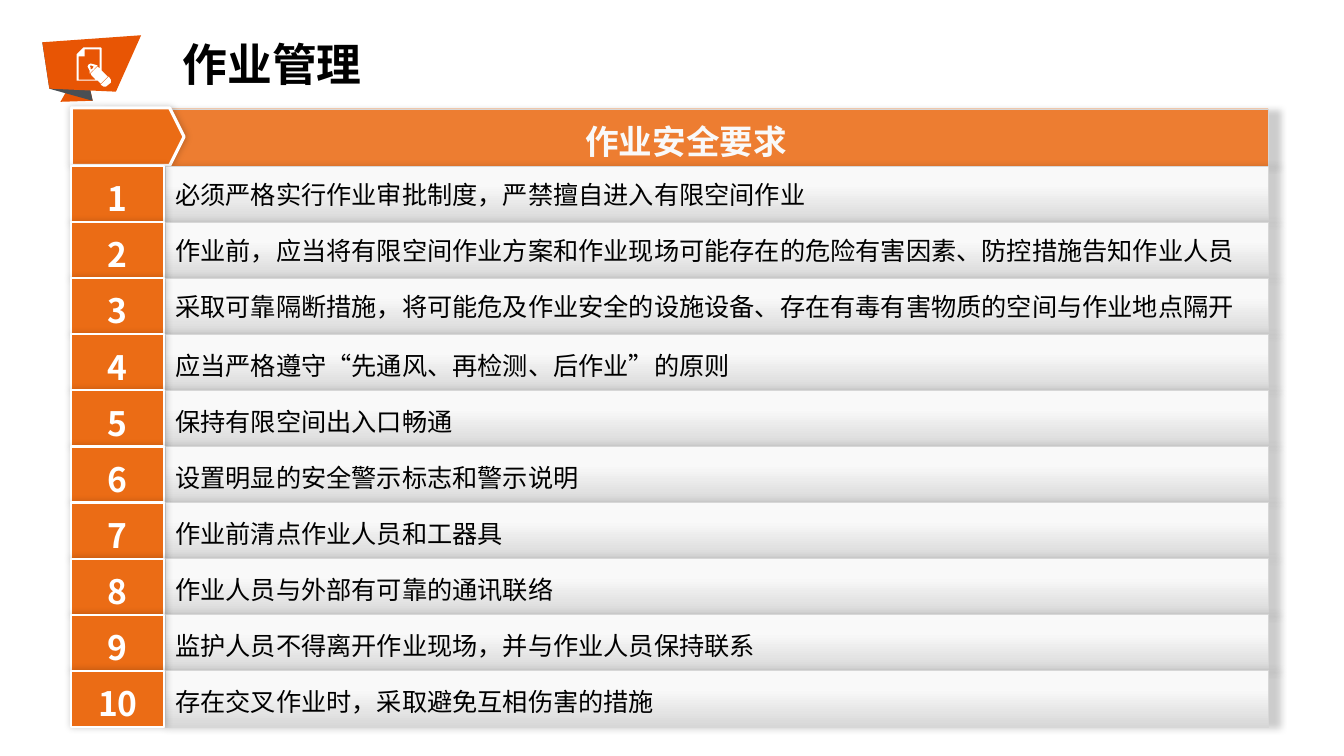
"""Builds the slide on work management: ten safety requirements under an orange header."""
from dataclasses import dataclass

from lxml.etree import SubElement
from pptx import Presentation
from pptx.dml.color import RGBColor
from pptx.enum.shapes import MSO_SHAPE
from pptx.enum.text import MSO_ANCHOR, PP_ALIGN
from pptx.oxml.ns import qn
from pptx.util import Cm, Pt


@dataclass(frozen=True)
class Theme:
    font: str = "Noto Sans CJK SC"
    header: str = "ED7D31"
    number: str = "EB6C15"
    badge: str = "E85504"
    fold: str = "494F54"
    light: str = "F9F9F9"
    grey: str = "D7D7D7"
    white: str = "FFFFFF"
    black: str = "000000"
    title_size: int = 32
    heading_size: int = 24
    body_size: int = 18


theme = Theme()


def write_text(shape, text, size, color, bold=False, align=PP_ALIGN.LEFT, spacing=1.0, wrap=True):
    frame = shape.text_frame
    frame.word_wrap = wrap
    paragraph = frame.paragraphs[0]
    paragraph.alignment = align
    paragraph.line_spacing = spacing
    run = paragraph.add_run()
    run.text = text
    run.font.name = theme.font
    run.font.size = Pt(size)
    run.font.bold = bold
    run.font.color.rgb = RGBColor.from_string(color)
    SubElement(run.font._element, qn("a:ea"), typeface=theme.font)


def add_panel(kind, left, top, width, height, fill, line, line_width):
    shape = slide.shapes.add_shape(kind, Cm(left), Cm(top), Cm(width), Cm(height))
    if len(fill) == 1:
        shape.fill.solid()
        shape.fill.fore_color.rgb = RGBColor.from_string(fill[0])
    else:
        shape.fill.gradient()
        shape.fill.gradient_angle = 270
        for stop, color, position in zip(shape.fill.gradient_stops, fill, (0.33, 1)):
            stop.color.rgb = RGBColor.from_string(color)
            stop.position = position
    shape.line.color.rgb = RGBColor.from_string(line)
    shape.line.width = Pt(line_width)
    shape.shadow.inherit = False
    effects = shape._element.spPr.find(qn("a:effectLst"))
    shadow = SubElement(effects, qn("a:outerShdw"), blurRad=str(Pt(5)), dist="0", dir="0",
                        sx="101000", algn="l", rotWithShape="0")
    shadow_color = SubElement(shadow, qn("a:srgbClr"), val=theme.black)
    SubElement(shadow_color, qn("a:alpha"), val="20000")
    shape.text_frame.vertical_anchor = MSO_ANCHOR.MIDDLE
    return shape


presentation = Presentation()
presentation.slide_width = Cm(33.87)
presentation.slide_height = Cm(19.05)
slide = presentation.slides.add_slide(presentation.slide_layouts[6])

header = add_panel(MSO_SHAPE.RECTANGLE, 2.62, 2.74, 29.34, 1.45, [theme.header], theme.grey, 0.25)
write_text(header, "作业安全要求", theme.heading_size, theme.light, bold=True,
           align=PP_ALIGN.CENTER, spacing=1.2)
arrow = add_panel(MSO_SHAPE.PENTAGON, 1.8, 2.72, 2.84, 1.45, [theme.number], theme.white, 2.25)
arrow.adjustments[0] = 0.25

requirements = [
    "必须严格实行作业审批制度，严禁擅自进入有限空间作业",
    "作业前，应当将有限空间作业方案和作业现场可能存在的危险有害因素、防控措施告知作业人员",
    "采取可靠隔断措施，将可能危及作业安全的设施设备、存在有毒有害物质的空间与作业地点隔开",
    "应当严格遵守“先通风、再检测、后作业”的原则",
    "保持有限空间出入口畅通",
    "设置明显的安全警示标志和警示说明",
    "作业前清点作业人员和工器具",
    "作业人员与外部有可靠的通讯联络",
    "监护人员不得离开作业现场，并与作业人员保持联系",
    "存在交叉作业时，采取避免互相伤害的措施",
]
row_height = 1.42
row_pitch = 12.71 / (len(requirements) - 1)
for index, requirement in enumerate(requirements):
    top = 4.19 + index * row_pitch
    row = add_panel(MSO_SHAPE.RECTANGLE, 4.17, top, 27.79, row_height,
                    [theme.light, theme.grey], theme.grey, 0.25)
    write_text(row, requirement, theme.body_size, theme.black, spacing=1.0 if index < 3 else 1.2)
    number = add_panel(MSO_SHAPE.RECTANGLE, 1.8, top, 2.34, row_height,
                       [theme.number], theme.white, 1.5)
    write_text(number, str(index + 1), theme.heading_size, theme.white, bold=True,
               align=PP_ALIGN.CENTER, spacing=1.2)

pencil_end = [(110, 82), (105, 86), (103, 86), (100, 84), (108, 76), (110, 79)]
page_inside = [(99, 49), (84, 49), (84, 56), (78, 56), (78, 79), (95, 79), (91, 75), (90, 73),
               (97, 66), (99, 68)]
page_and_pencil = [(101, 82), (100, 83), (97, 80), (76, 80), (76, 54), (83, 47), (100, 47),
                   (101, 48), (101, 70), (107, 76)]
tip_inside = [(91, 65), (89, 65), (90, 67), (90, 69), (92, 68), (93, 66)]
pencil_tip = [(93, 69), (89, 73), (89, 70), (87, 66), (88, 64), (90, 63), (94, 64), (97, 65)]
badge_parts = [
    (theme.badge, [[(92, 100), (83, 60), (60, 101)]]),
    (theme.fold, [[(83, 60), (42, 42), (49, 88), (92, 100)]]),
    (theme.badge, [[(140, 35), (42, 42), (49, 88), (115, 91)]]),
    (theme.white, [pencil_end, page_inside, page_and_pencil, tip_inside, pencil_tip]),
]
for color, outlines in badge_parts:
    builder = slide.shapes.build_freeform(*outlines[0][0], scale=Cm(2.54) / 100)
    for outline in outlines:
        if outline is not outlines[0]:
            builder.move_to(*outline[0])
        builder.add_line_segments(outline[1:], close=True)
    part = builder.convert_to_shape()
    part.fill.solid()
    part.fill.fore_color.rgb = RGBColor.from_string(color)
    part.line.fill.background()
    part.shadow.inherit = False

title = slide.shapes.add_textbox(Cm(4.32), Cm(1.3), Cm(5.08), Cm(1.17))
write_text(title, "作业管理", theme.title_size, theme.black, bold=True,
           align=PP_ALIGN.CENTER, spacing=Pt(24), wrap=False)

presentation.save("out.pptx")
